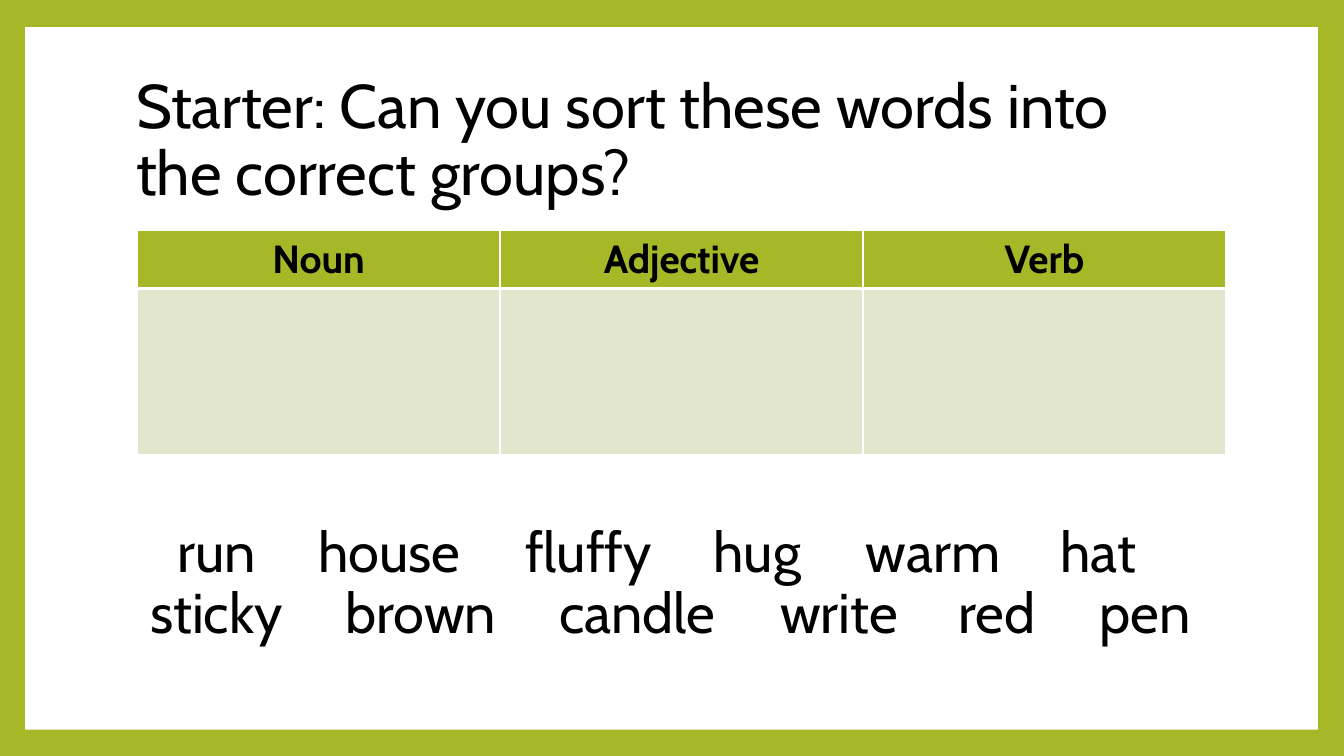
from lxml import etree
from pptx import Presentation
from pptx.dml.color import RGBColor
from pptx.enum.shapes import MSO_SHAPE
from pptx.enum.text import MSO_ANCHOR, PP_ALIGN
from pptx.oxml.ns import qn
from pptx.util import Inches, Pt

RECTANGLE = MSO_SHAPE.RECTANGLE
MIDDLE = MSO_ANCHOR.MIDDLE
CENTER, LEFT = PP_ALIGN.CENTER, PP_ALIGN.LEFT

# Content
QUESTION = "Starter: Can you sort these words into the correct groups?"
GROUPS = ["Noun", "Adjective", "Verb"]
# Each word with its tab stop in inches from the text edge
WORD_ROWS = [
    [("run", 0.41), ("house", 1.81), ("fluffy", 3.86),
     ("hug", 5.73), ("warm", 7.24), ("hat", 9.17)],
    [("sticky", 0.14), ("brown", 2.08), ("candle", 4.2),
     ("write", 6.39), ("red", 8.16), ("pen", 9.56)],
]
FONT = "Cabin"
COLORS = {"green": "A6B727", "pale": "E1E6CD", "white": "FFFFFF", "black": "000000"}
COLUMN_WIDTH = 3.6
ROW_HEIGHTS = [0.56, 1.65]


def color(name):
    return RGBColor.from_string(COLORS[name])


def style(paragraph, size, align, bold=False):
    paragraph.alignment = align
    paragraph.font.name = FONT
    paragraph.font.size = Pt(size)
    paragraph.font.bold = bold
    paragraph.font.color.rgb = color("black")


def place(shape, left, top, width, height):
    shape.left, shape.top = Inches(left), Inches(top)
    shape.width, shape.height = Inches(width), Inches(height)


def set_borders(cell, **widths):
    properties = cell._tc.get_or_add_tcPr()
    for side in ("L", "R", "T", "B"):
        line = etree.SubElement(properties, qn(f"a:ln{side}"), w=str(Pt(widths.get(side, 1))))
        fill = etree.SubElement(line, qn("a:solidFill"))
        etree.SubElement(fill, qn("a:srgbClr"), val=COLORS["white"])


def set_tabs(paragraph, stops):
    tabs = etree.SubElement(paragraph._p.get_or_add_pPr(), qn("a:tabLst"))
    for stop in stops:
        etree.SubElement(tabs, qn("a:tab"), pos=str(Inches(stop)), algn="l")


deck = Presentation()
deck.slide_width, deck.slide_height = Inches(13.33), Inches(7.5)
slide = deck.slides.add_slide(deck.slide_layouts[5])

# Green frame around a white panel
slide.background.fill.solid()
slide.background.fill.fore_color.rgb = color("green")
panel = slide.shapes.add_shape(
    RECTANGLE, Inches(0.25), Inches(0.27), Inches(12.82), Inches(6.97))
panel.shadow.inherit = False
panel.fill.solid()
panel.fill.fore_color.rgb = color("white")
panel.line.fill.background()
slide.shapes._spTree.insert(2, panel._element)

# Title
title = slide.shapes.title
place(title, 1.25, 0.67, 10.8, 1.48)
title.text_frame.text = QUESTION
title.text_frame.vertical_anchor = MIDDLE
question = title.text_frame.paragraphs[0]
style(question, 44, LEFT)
question.line_spacing = 0.9

# Sorting table
sorting = slide.shapes.add_table(
    len(ROW_HEIGHTS), len(GROUPS), Inches(1.36), Inches(2.29),
    Inches(COLUMN_WIDTH * len(GROUPS)), Inches(sum(ROW_HEIGHTS))).table
for row, height in zip(sorting.rows, ROW_HEIGHTS):
    row.height = Inches(height)
for column, group in enumerate(GROUPS):
    sorting.columns[column].width = Inches(COLUMN_WIDTH)
    header, answers = sorting.cell(0, column), sorting.cell(1, column)
    header.text = group
    style(header.text_frame.paragraphs[0], 28, CENTER, bold=True)
    set_borders(header, B=3)
    set_borders(answers, T=3)
    for cell, fill in ((header, "green"), (answers, "pale")):
        cell.fill.solid()
        cell.fill.fore_color.rgb = color(fill)

# Words to sort, each led in by a tab
word_box = slide.shapes.add_textbox(Inches(1.25), Inches(4.64), Inches(10.8), Inches(2.32))
words_frame = word_box.text_frame
words_frame.word_wrap = True
words_frame.vertical_anchor = MIDDLE
words_frame.text = "\n".join("".join(f"\t{word}" for word, _ in row) for row in WORD_ROWS)
for paragraph, row in zip(words_frame.paragraphs, WORD_ROWS):
    paragraph.line_spacing = 0.9
    set_tabs(paragraph, [stop for _, stop in row])
    style(paragraph, 40, LEFT)

deck.save("out.pptx")
